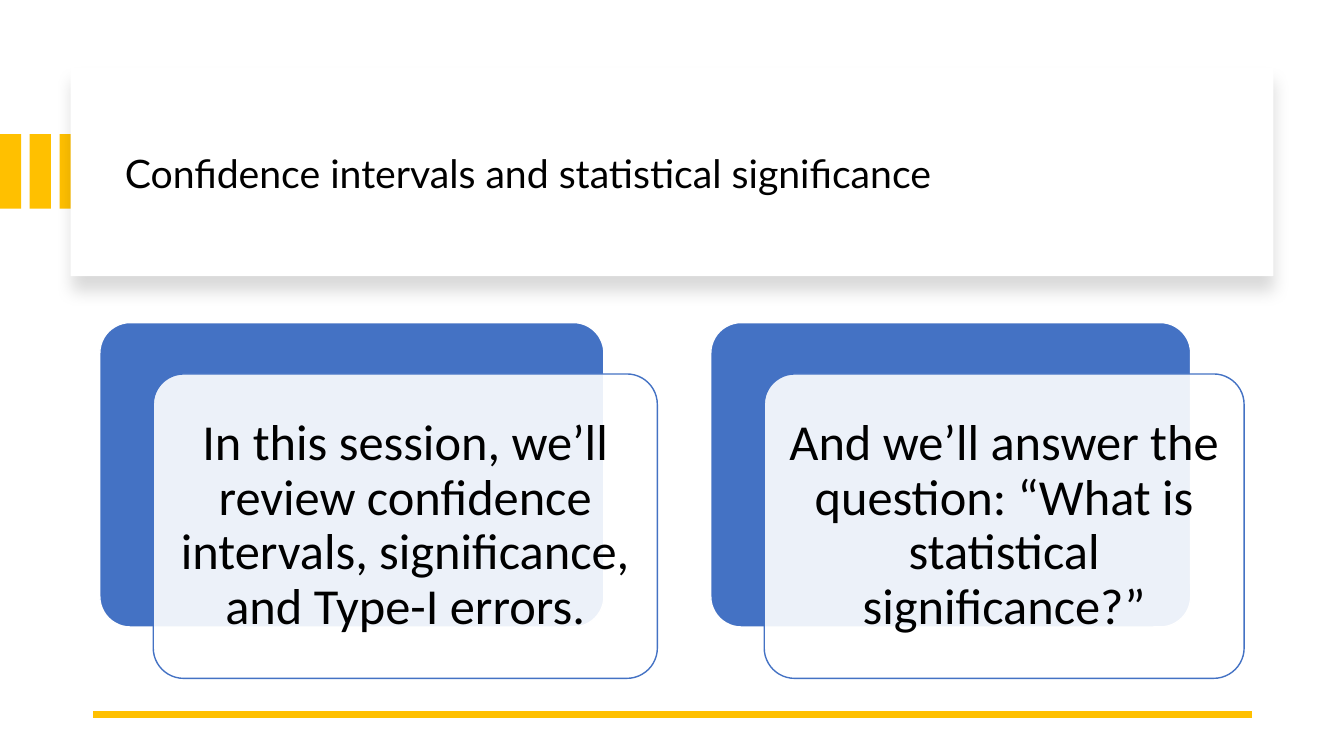
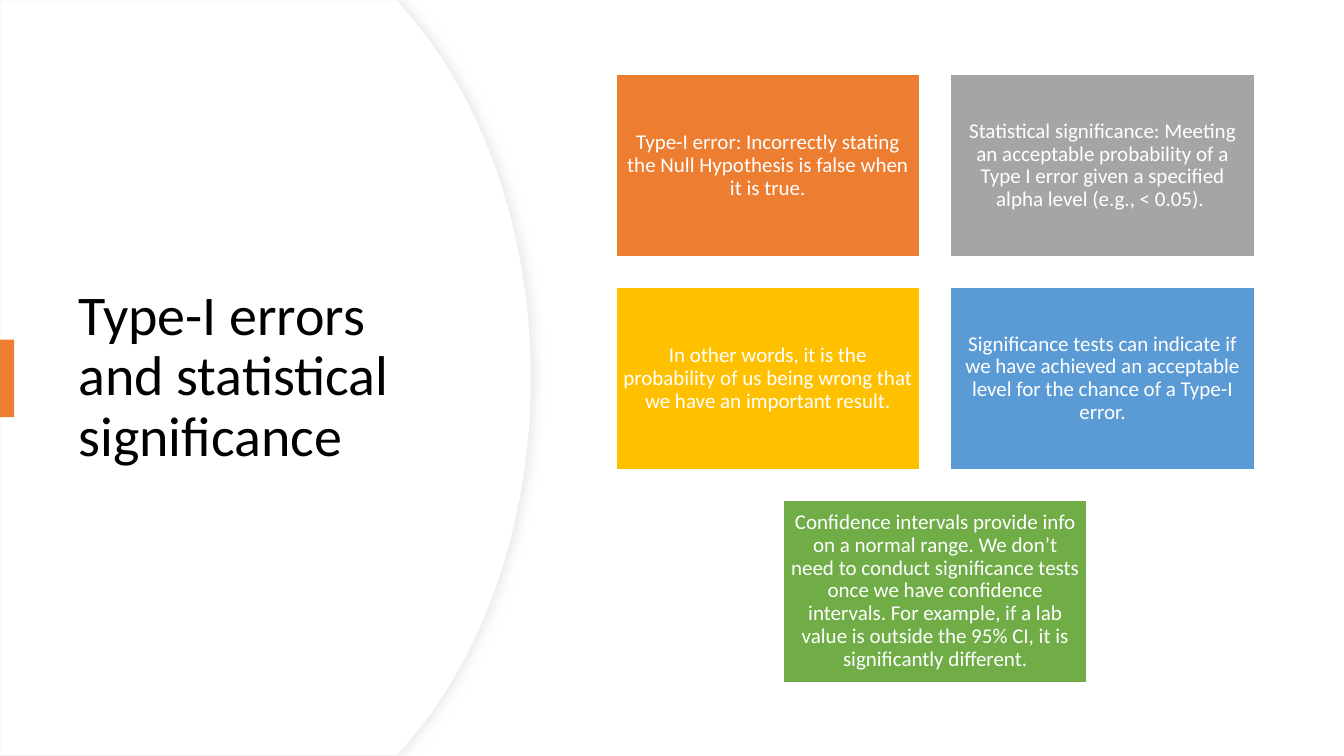
import math

from lxml import etree
from pptx import Presentation
from pptx.dml.color import RGBColor
from pptx.enum.shapes import MSO_CONNECTOR, MSO_SHAPE
from pptx.enum.text import MSO_ANCHOR, PP_ALIGN
from pptx.oxml.ns import qn
from pptx.util import Inches, Pt

RECTANGLE, ROUNDED = MSO_SHAPE.RECTANGLE, MSO_SHAPE.ROUNDED_RECTANGLE
STRAIGHT = MSO_CONNECTOR.STRAIGHT
MIDDLE = MSO_ANCHOR.MIDDLE
LEFT, CENTER = PP_ALIGN.LEFT, PP_ALIGN.CENTER

WHITE, BLACK = "FFFFFF", "000000"
GOLD, BLUE, ORANGE = "FFC000", "4472C4", "ED7D31"
GRAY, SKY, GREEN = "A5A5A5", "5B9BD5", "70AD47"
BODY_FONT = "Calibri"


def style(shape, fill, line=None, line_width=1, opacity=100, shadow=None):
    """Set fill and outline; shadow is (colour, opacity, blur, distance, angle)."""
    shape.fill.solid()
    shape.fill.fore_color.rgb = RGBColor.from_string(fill)
    properties = shape._element.spPr
    if opacity < 100:
        color = properties.find(qn("a:solidFill")).find(qn("a:srgbClr"))
        etree.SubElement(color, qn("a:alpha"), val=str(opacity * 1000))
    if line:
        shape.line.color.rgb = RGBColor.from_string(line)
        shape.line.width = Pt(line_width)
    else:
        shape.line.fill.background()
    shape.shadow.inherit = False
    if shadow:
        shadow_color, shadow_opacity, blur, distance, angle = shadow
        outer = etree.SubElement(
            properties.find(qn("a:effectLst")), qn("a:outerShdw"),
            blurRad=str(Pt(blur)), dist=str(Pt(distance)),
            dir=str(angle * 60000), algn="ctr", rotWithShape="0")
        color = etree.SubElement(outer, qn("a:srgbClr"), val=shadow_color)
        etree.SubElement(color, qn("a:alpha"), val=str(shadow_opacity * 1000))


def write(shape, text, size, color=BLACK, font=BODY_FONT, align=LEFT, inset=None):
    """Put one vertically centred paragraph in a shape."""
    frame = shape.text_frame
    frame.word_wrap = True
    frame.vertical_anchor = MIDDLE
    if inset is not None:
        frame.margin_left = frame.margin_right = Inches(inset)
        frame.margin_top = frame.margin_bottom = Inches(inset)
    paragraph = frame.paragraphs[0]
    paragraph.alignment = align
    paragraph.line_spacing = 0.9
    run = paragraph.add_run()
    run.text = text
    run.font.name = font
    run.font.size = Pt(size)
    run.font.color.rgb = RGBColor.from_string(color)


presentation = Presentation()
presentation.slide_width = Inches(13.33)
presentation.slide_height = Inches(7.5)
blank = presentation.slide_layouts[6]

# Slide 1: session overview
slide = presentation.slides.add_slide(blank)
shapes = slide.shapes
for index in range(3):
    bar = shapes.add_shape(RECTANGLE, Inches(index * 0.295), Inches(1.33),
                           Inches(0.21), Inches(0.74))
    style(bar, GOLD)

banner = shapes.add_shape(RECTANGLE, Inches(0.7), Inches(0.67),
                          Inches(11.93), Inches(2.07))
style(banner, WHITE, shadow=(BLACK, 15, 11, 10, 90))
title = shapes.add_textbox(Inches(1.14), Inches(0.89), Inches(11.13), Inches(1.7))
write(title, "Confidence intervals and statistical significance", 28, font="Lato")

rule = shapes.add_connector(STRAIGHT, Inches(12.42), Inches(7.09),
                            Inches(0.92), Inches(7.09))
rule.line.color.rgb = RGBColor.from_string(GOLD)
rule.line.width = Pt(4.5)
etree.SubElement(rule._element.spPr, qn("a:effectLst"))

cards = [
    (0.99, 5, "In this session, we’ll review confidence intervals, "
              "significance, and Type-I errors."),
    (7.05, 4.76, "And we’ll answer the question: “What is statistical "
                 "significance?”"),
]
for left, width, text in cards:
    back = shapes.add_shape(ROUNDED, Inches(left), Inches(3.2),
                            Inches(width), Inches(3.02))
    front = shapes.add_shape(ROUNDED, Inches(left + 0.53), Inches(3.71),
                             Inches(width), Inches(3.02))
    back.adjustments[0] = front.adjustments[0] = 0.1
    style(back, BLUE, WHITE)
    style(front, WHITE, BLUE, opacity=90)
    # The text area of a rounded shape already lies 0.09 inside its outline
    write(front, text, 36, align=CENTER, inset=0.15)

# Slide 2: definitions
slide = presentation.slides.add_slide(blank)
shapes = slide.shapes

# Curved panel: an elliptical edge that meets the slide's top and bottom at x = 3.94
center_x, center_y, radius_x, radius_y = 1.82, 3.75, 3.45, 4.75
limit = math.asin(center_y / radius_y)
steps = 80
edge = []
for step in range(steps + 1):
    angle = limit * (2 * step / steps - 1)
    edge.append((Inches(center_x + radius_x * math.cos(angle)),
                 Inches(center_y + radius_y * math.sin(angle))))
builder = shapes.build_freeform(0, 0, scale=1.0)
builder.add_line_segments(edge + [(0, Inches(7.5))], close=True)
panel = builder.convert_to_shape()
style(panel, WHITE, "EFEFEF", 0.75, shadow=("D9D9D9", 50, 7, 3, 0))

title = shapes.add_textbox(Inches(0.68), Inches(1.27), Inches(3.94), Inches(4.95))
write(title, "Type-I errors and statistical significance", 40)
marker = shapes.add_shape(RECTANGLE, 0, Inches(3.37), Inches(0.14), Inches(0.77))
style(marker, ORANGE)

tile_rows = [
    [(ORANGE, "Type-I error: Incorrectly stating the Null Hypothesis is false "
              "when it is true."),
     (GRAY, "Statistical significance: Meeting an acceptable probability of a "
            "Type I error given a specified alpha level (e.g., < 0.05). ")],
    [(GOLD, "In other words, it is the probability of us being wrong that we "
            "have an important result."),
     (SKY, "Significance tests can indicate if we have achieved an acceptable "
           "level for the chance of a Type-I error.")],
    [(GREEN, "Confidence intervals provide info on a normal range. We don’t need "
             "to conduct significance tests once we have confidence intervals. "
             "For example, if a lab value is outside the 95% CI, it is "
             "significantly different.")],
]
column_pitch, row_pitch = 3.32, 2.11
for row, tiles in enumerate(tile_rows):
    row_left = 6.11 + (2 - len(tiles)) * column_pitch / 2
    for column, (color, text) in enumerate(tiles):
        tile = shapes.add_shape(RECTANGLE, Inches(row_left + column * column_pitch),
                                Inches(0.74 + row * row_pitch),
                                Inches(3.01), Inches(1.81))
        style(tile, color, WHITE)
        write(tile, text, 15, WHITE, align=CENTER, inset=0.06)

presentation.save("out.pptx")
